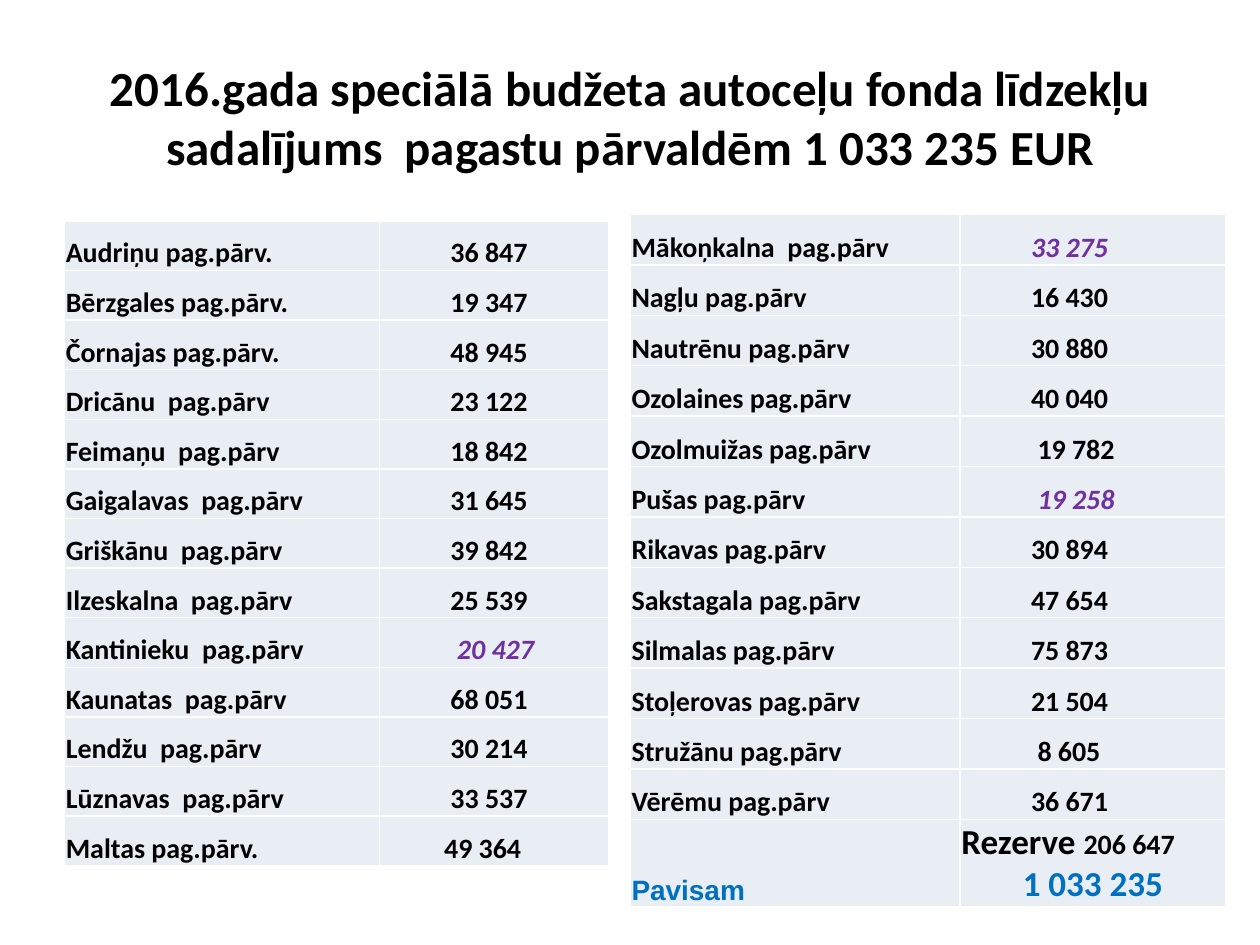
from dataclasses import dataclass

from lxml.etree import SubElement
from pptx import Presentation
from pptx.dml.color import RGBColor
from pptx.enum.text import MSO_ANCHOR, PP_ALIGN
from pptx.oxml.ns import qn
from pptx.util import Pt

BLACK, WHITE, PURPLE, BLUE, PALE = "000000", "FFFFFF", "7030A0", "0070C0", "E9EDF4"
NEAR, MID, FAR = 36.9, 40.5, 44.2
EDGE = 0.72


@dataclass
class Run:
    text: str
    size: float = 16
    tint: str = BLACK
    slant: bool = False
    font: str = "Calibri"


@dataclass
class Parish:
    name: str
    sum: str
    pad: float = MID
    mark: bool = False


@dataclass
class Grid:
    left: float
    top: float
    cols: tuple[float, float]
    step: float
    rows: list[Parish]
    last: float = 0


LEFT = Grid(36.9, 126.2, (180, 131), 28.35, [
    Parish("Audriņu pag.pārv.", "36 847"),
    Parish("Bērzgales pag.pārv.", "19 347"),
    Parish("Čornajas pag.pārv.", "48 945"),
    Parish("Dricānu  pag.pārv", "23 122"),
    Parish("Feimaņu  pag.pārv", "18 842"),
    Parish("Gaigalavas  pag.pārv", "31 645"),
    Parish("Griškānu  pag.pārv", "39 842"),
    Parish("Ilzeskalna  pag.pārv", "25 539"),
    Parish("Kantinieku  pag.pārv", "20 427", FAR, True),
    Parish("Kaunatas  pag.pārv", "68 051"),
    Parish("Lendžu  pag.pārv", "30 214"),
    Parish("Lūznavas  pag.pārv", "33 537"),
    Parish("Maltas pag.pārv.", "49 364", NEAR),
])
RIGHT = Grid(360.2, 122.6, (188.5, 151.7), 28.8, [
    Parish("Mākoņkalna  pag.pārv", "33 275", MID, True),
    Parish("Nagļu pag.pārv", "16 430"),
    Parish("Nautrēnu pag.pārv", "30 880"),
    Parish("Ozolaines pag.pārv", "40 040"),
    Parish("Ozolmuižas pag.pārv", "19 782", FAR),
    Parish("Pušas pag.pārv", "19 258", FAR, True),
    Parish("Rikavas pag.pārv", "30 894"),
    Parish("Sakstagala pag.pārv", "47 654"),
    Parish("Silmalas pag.pārv", "75 873"),
    Parish("Stoļerovas pag.pārv", "21 504"),
    Parish("Stružānu pag.pārv", "8 605", FAR),
    Parish("Vērēmu pag.pārv", "36 671"),
], 49.5)


def hue(code: str) -> RGBColor:
    return RGBColor.from_string(code)


def write(para, runs: list[Run], align=PP_ALIGN.LEFT) -> None:
    para.alignment = align
    for item in runs:
        run = para.add_run()
        run.text = item.text
        font = run.font
        font.name, font.size = item.font, Pt(item.size)
        font.bold, font.italic = True, item.slant
        font.color.rgb = hue(item.tint)


def rule(cell) -> None:
    props = cell._tc.get_or_add_tcPr()
    for spot, side in enumerate(("lnL", "lnR", "lnT", "lnB")):
        line = props.makeelement(qn(f"a:{side}"), {"w": str(Pt(1))})
        fill = SubElement(line, qn("a:solidFill"))
        SubElement(fill, qn("a:srgbClr"), val=WHITE)
        props.insert(spot, line)


def fill_cell(cell, runs: list[Run], pad: float = EDGE) -> None:
    cell.margin_left, cell.margin_bottom = Pt(pad), 0
    cell.margin_right = cell.margin_top = Pt(EDGE)
    cell.vertical_anchor = MSO_ANCHOR.BOTTOM
    cell.fill.solid()
    cell.fill.fore_color.rgb = hue(PALE)
    rule(cell)
    write(cell.text_frame.paragraphs[0], runs)


def draw_grid(slide, grid: Grid):
    highs = [grid.step] * len(grid.rows) + ([grid.last] if grid.last else [])
    frame = slide.shapes.add_table(
        len(highs), 2, Pt(grid.left), Pt(grid.top), Pt(sum(grid.cols)), Pt(sum(highs)))
    table = frame.table
    table.first_row = table.horz_banding = False
    for col, wide in zip(table.columns, grid.cols):
        col.width = Pt(wide)
    for row, high in zip(table.rows, highs):
        row.height = Pt(high)
    for spot, item in enumerate(grid.rows):
        fill_cell(table.cell(spot, 0), [Run(item.name)])
        tint = PURPLE if item.mark else BLACK
        fill_cell(table.cell(spot, 1), [Run(item.sum, 16, tint, item.mark)], item.pad)
    return table


def draw_total(table) -> None:
    spot = len(table.rows) - 1
    fill_cell(table.cell(spot, 0), [Run("Pavisam", tint=BLUE, font="Arial")])
    cell = table.cell(spot, 1)
    fill_cell(cell, [Run("Rezerve ", 20), Run("206 647")])
    write(cell.text_frame.add_paragraph(), [Run("1 033 235", 20, BLUE)], PP_ALIGN.CENTER)


def draw_title(slide) -> None:
    box = slide.shapes.add_textbox(Pt(36), Pt(21.6), Pt(648), Pt(90))
    frame = box.text_frame
    frame.word_wrap = True
    frame.vertical_anchor = MSO_ANCHOR.MIDDLE
    text = ("2016.gada speciālā budžeta autoceļu fonda līdzekļu "
            "sadalījums  pagastu pārvaldēm 1 033 235 EUR")
    write(frame.paragraphs[0], [Run(text, 28)], PP_ALIGN.CENTER)


def main() -> None:
    deck = Presentation()
    deck.slide_width, deck.slide_height = Pt(720), Pt(540)
    slide = deck.slides.add_slide(deck.slide_layouts[6])
    draw_grid(slide, LEFT)
    draw_total(draw_grid(slide, RIGHT))
    draw_title(slide)
    deck.save("out.pptx")


if __name__ == "__main__":
    main()
